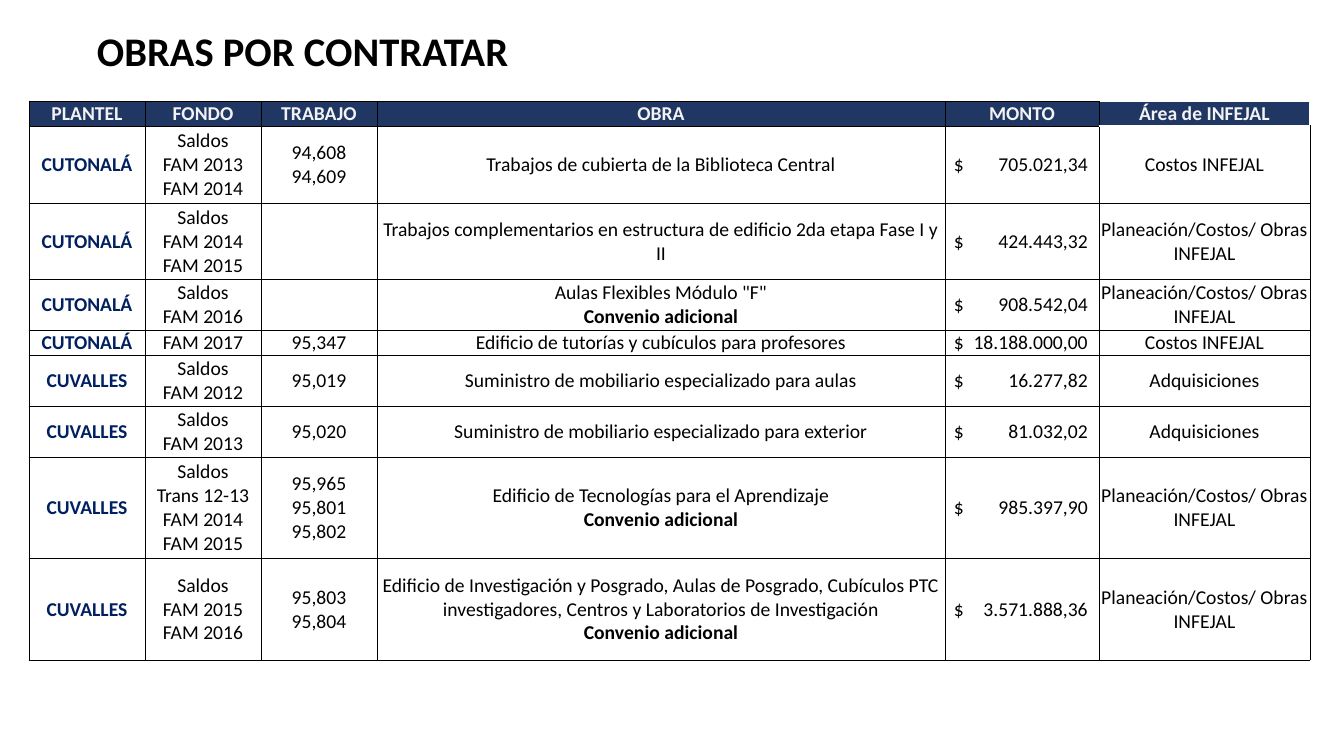
"""Build the slide that lists the works still to be contracted."""
import pptx
import pptx.dml.color
import pptx.enum.text
import pptx.oxml
import pptx.oxml.ns
import pptx.util

EMU_PER_PX = 914400 / 100.8
FONT = "Calibri"
NAVY, BLUE, BLACK, WHITE, PALE = "203764", "002060", "000000", "FFFFFF", "F2F2F2"
ALIGN = pptx.enum.text.PP_ALIGN
MIDDLE = pptx.enum.text.MSO_ANCHOR.MIDDLE

COL_WIDTHS = [116, 116, 116, 568, 154, 211]
ROW_HEIGHTS = [25, 77, 76, 51, 25, 51, 51, 101, 102]
CAMPUS_COL, AMOUNT_COL, AREA_COL = 0, 4, 5
ADDENDUM = "Convenio adicional"
PLANNING = "Planeación/Costos/ Obras INFEJAL"
HEADERS = ["PLANTEL", "FONDO", "TRABAJO", "OBRA", "MONTO", "Área de INFEJAL"]
WORKS = [
    ["CUTONALÁ", "Saldos\nFAM 2013\nFAM 2014", "94,608\n94,609",
     "Trabajos de cubierta de la Biblioteca Central", "705.021,34", "Costos INFEJAL"],
    ["CUTONALÁ", "Saldos\nFAM 2014\nFAM 2015", "",
     "Trabajos complementarios en estructura de edificio 2da etapa Fase I y II",
     "424.443,32", PLANNING],
    ["CUTONALÁ", "Saldos\nFAM 2016", "", 'Aulas Flexibles Módulo "F"\n' + ADDENDUM,
     "908.542,04", PLANNING],
    ["CUTONALÁ", "FAM 2017", "95,347", "Edificio de tutorías y cubículos para profesores",
     "18.188.000,00", "Costos INFEJAL"],
    ["CUVALLES", "Saldos\nFAM 2012", "95,019",
     "Suministro de mobiliario especializado para aulas", "16.277,82", "Adquisiciones"],
    ["CUVALLES", "Saldos\nFAM 2013", "95,020",
     "Suministro de mobiliario especializado para exterior", "81.032,02", "Adquisiciones"],
    ["CUVALLES", "Saldos\nTrans 12-13\nFAM 2014\nFAM 2015", "95,965\n95,801\n95,802",
     "Edificio de Tecnologías para el Aprendizaje\n" + ADDENDUM, "985.397,90", PLANNING],
    ["CUVALLES", "Saldos\nFAM 2015\nFAM 2016", "95,803\n95,804",
     "Edificio de Investigación y Posgrado, Aulas de Posgrado, Cubículos PTC "
     "investigadores, Centros y Laboratorios de Investigación\n" + ADDENDUM,
     "3.571.888,36", PLANNING],
]


def px(n):
    return pptx.util.Emu(round(n * EMU_PER_PX))


def rgb(value):
    return pptx.dml.color.RGBColor.from_string(value)


def write(tf, text, size=14, color=BLACK, bold=False, align=ALIGN.CENTER, tab=None):
    p = tf.paragraphs[0]
    p.alignment = align
    if tab:
        p._p.get_or_add_pPr().append(pptx.oxml.parse_xml(
            f'<a:tabLst {pptx.oxml.ns.nsdecls("a")}>'
            f'<a:tab pos="{px(tab)}" algn="r"/></a:tabLst>'))
    p.font.size = pptx.util.Pt(size)
    for i, line in enumerate(text.split("\n")):
        if i:
            p.add_line_break()
        r = p.add_run()
        r.text = line
        r.font.name = FONT
        r.font.size = pptx.util.Pt(size)
        r.font.bold = bold or line == ADDENDUM
        r.font.color.rgb = rgb(color)


def add_borders(cell, sides):
    tcPr = cell._tc.get_or_add_tcPr()
    for i, side in enumerate(sides):
        tcPr.insert(i, pptx.oxml.parse_xml(
            f'<a:ln{side} {pptx.oxml.ns.nsdecls("a")} w="6350"><a:solidFill>'
            f'<a:srgbClr val="{BLACK}"/></a:solidFill></a:ln{side}>'))


def fill_cell(cell, row, col, text):
    cell.fill.solid()
    cell.fill.fore_color.rgb = rgb(WHITE if row else NAVY)
    cell.vertical_anchor = MIDDLE
    cell.margin_left = cell.margin_right = cell.margin_top = px(1)
    cell.margin_bottom = 0
    sides = {(0, AREA_COL): "L", (1, AREA_COL): "LRB"}.get((row, col), "LRTB")
    add_borders(cell, sides)
    tf = cell.text_frame
    if row == 0:
        write(tf, text, color=PALE, bold=True)
    elif col == CAMPUS_COL:
        write(tf, text, color=BLUE, bold=True)
    elif col == AMOUNT_COL:
        cell.margin_left = px(9)
        write(tf, "$\t" + text, align=ALIGN.LEFT, tab=134)
    elif text:
        write(tf, text)


def add_works_table(s, left, top):
    rows = [HEADERS] + WORKS
    table = s.shapes.add_table(len(rows), len(HEADERS), px(left), px(top),
                               px(sum(COL_WIDTHS)), px(sum(ROW_HEIGHTS))).table
    table.first_row = table.horz_banding = False
    for column, width in zip(table.columns, COL_WIDTHS):
        column.width = px(width)
    for i, (height, texts) in enumerate(zip(ROW_HEIGHTS, rows)):
        table.rows[i].height = px(height)
        for j, text in enumerate(texts):
            fill_cell(table.cell(i, j), i, j, text)


def add_title(s, text, left, top, width, height):
    tf = s.shapes.add_textbox(px(left), px(top), px(width), px(height)).text_frame
    tf.word_wrap = True
    write(tf, text, size=29, bold=True, align=ALIGN.LEFT)


def main():
    prs = pptx.Presentation()
    prs.slide_width, prs.slide_height = px(1344), px(756)
    s = prs.slides.add_slide(prs.slide_layouts[6])
    add_works_table(s, 29, 101)
    add_title(s, "OBRAS POR CONTRATAR", 87, 21, 672, 59)
    prs.save("out.pptx")


if __name__ == "__main__":
    main()
